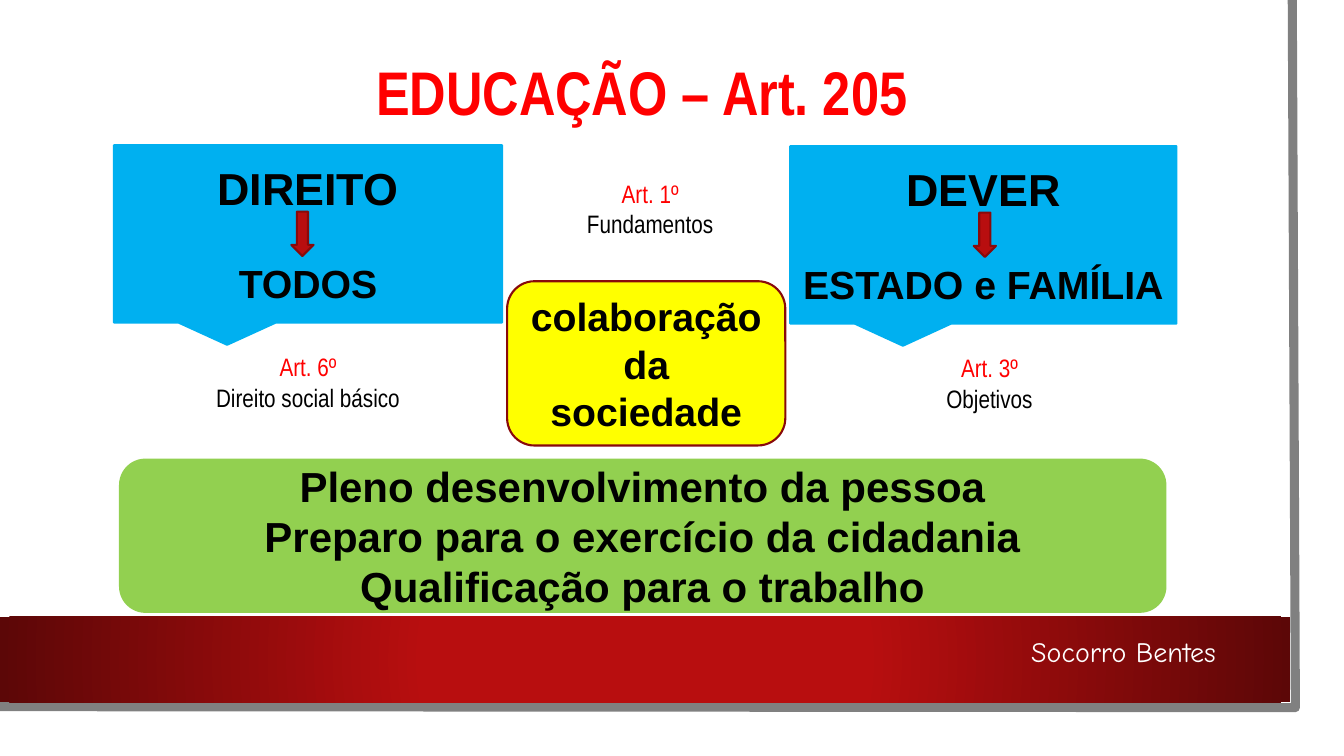
from dataclasses import dataclass

from lxml.etree import SubElement
from pptx import Presentation
from pptx.dml.color import RGBColor
from pptx.enum.shapes import MSO_SHAPE
from pptx.enum.text import MSO_ANCHOR, MSO_AUTO_SIZE, PP_ALIGN
from pptx.oxml.ns import qn
from pptx.util import Inches, Pt

RED = RGBColor(0xFF, 0x00, 0x00)
BLACK = RGBColor(0x00, 0x00, 0x00)
WHITE = RGBColor(0xFF, 0xFF, 0xFF)
GRAY = RGBColor(0x80, 0x80, 0x80)
BRICK = RGBColor(0xB8, 0x0E, 0x0F)
WINE = RGBColor(0x88, 0x0A, 0x0B)
DARK = RGBColor(0x5C, 0x07, 0x07)
BLUE = RGBColor(0x00, 0xB0, 0xF0)
GREEN = RGBColor(0x92, 0xD0, 0x50)
YELLOW = RGBColor(0xFF, 0xFF, 0x00)

NARROW = "Arial Narrow"
WIDE = Inches(13.33)
HIGH = Inches(7.5)


@dataclass(frozen=True)
class Box:
    """Left, top, width and height as percent of the slide."""
    left: float
    top: float
    width: float
    height: float

    def place(self) -> tuple[int, int, int, int]:
        return (across(self.left), down(self.top),
                across(self.width), down(self.height))


@dataclass(frozen=True)
class Line:
    text: str
    size: int
    color: RGBColor = BLACK
    font: str = "Arial"
    bold: bool = True
    before: int = 0


@dataclass(frozen=True)
class Panel:
    kind: MSO_SHAPE
    box: Box
    fill: RGBColor
    edge: RGBColor
    lines: tuple[Line, ...] = ()


@dataclass(frozen=True)
class Note:
    box: Box
    lines: tuple[Line, ...]
    align: PP_ALIGN = PP_ALIGN.CENTER


def across(share: float) -> int:
    return round(WIDE * share / 100)


def down(share: float) -> int:
    return round(HIGH * share / 100)


def write(frame, lines: tuple[Line, ...], align=PP_ALIGN.CENTER) -> None:
    frame.word_wrap = True
    for index, line in enumerate(lines):
        para = frame.add_paragraph() if index else frame.paragraphs[0]
        para.alignment = align
        if line.before:
            para.space_before = Pt(line.before)
        run = para.add_run()
        run.text = line.text
        run.font.name = line.font
        run.font.size = Pt(line.size)
        run.font.bold = line.bold
        run.font.color.rgb = line.color


def draw_frame(slide) -> None:
    pen = slide.shapes.build_freeform(across(96.15), 0)
    pen.add_line_segments([(across(96.38), down(93.6)), (0, down(93.47))], close=False)
    edge = pen.convert_to_shape()
    edge.shadow.inherit = False
    edge.fill.background()
    edge.line.color.rgb = GRAY
    edge.line.width = Pt(6.5)


def draw_band(slide) -> None:
    """Draw the footer band, bright in the middle and dark at both ends."""
    band = slide.shapes.add_shape(MSO_SHAPE.RECTANGLE, *Box(0, 81.6, 96, 11.33).place())
    band.shadow.inherit = False
    band.line.fill.background()
    band.fill.gradient()
    grad = band.fill._xPr.find(qn("a:gradFill"))
    for child in list(grad):
        grad.remove(child)
    stops = SubElement(grad, qn("a:gsLst"))
    for share, color in ((34, BRICK), (100, DARK)):
        stop = SubElement(stops, qn("a:gs"), pos=str(share * 1000))
        SubElement(stop, qn("a:srgbClr"), val=str(color))
    shade = SubElement(grad, qn("a:path"), {"path": "circle"})
    SubElement(shade, qn("a:fillToRect"), dict.fromkeys("ltrb", "50000"))


def draw_title(slide, box: Box, line: Line) -> None:
    title = slide.shapes.title
    title.left, title.top, title.width, title.height = box.place()
    write(title.text_frame, (line,))
    title.text_frame.auto_size = MSO_AUTO_SIZE.NONE
    title.text_frame.vertical_anchor = MSO_ANCHOR.TOP


def draw_panel(slide, panel: Panel) -> None:
    shape = slide.shapes.add_shape(panel.kind, *panel.box.place())
    shape.shadow.inherit = False
    shape.fill.solid()
    shape.fill.fore_color.rgb = panel.fill
    shape.line.color.rgb = panel.edge
    shape.line.width = Pt(1.5)
    shape.text_frame.vertical_anchor = MSO_ANCHOR.MIDDLE
    write(shape.text_frame, panel.lines)


def draw_note(slide, note: Note) -> None:
    frame = slide.shapes.add_textbox(*note.box.place()).text_frame
    write(frame, note.lines, note.align)
    frame.auto_size = MSO_AUTO_SIZE.SHAPE_TO_FIT_TEXT


def callout(box: Box, head: str, foot: str) -> Panel:
    lines = (Line(head, 32), Line(foot, 28, before=32))
    return Panel(MSO_SHAPE.RECTANGULAR_CALLOUT, box, BLUE, BLUE, lines)


def arrow(left: float, top: float) -> Panel:
    return Panel(MSO_SHAPE.DOWN_ARROW, Box(left, top, 1.65, 5.87), BRICK, WINE)


def cite(box: Box, head: str, foot: str) -> Note:
    return Note(box, (Line(head, 18, RED, NARROW, False),
                      Line(foot, 18, BLACK, NARROW, False)))


GOALS = ("Pleno desenvolvimento da pessoa",
         "Preparo para o exercício da cidadania",
         "Qualificação para o trabalho")

PANELS = (
    Panel(MSO_SHAPE.ROUNDED_RECTANGLE, Box(37.73, 37.2, 20.7, 21.73), YELLOW, WINE,
          (Line("colaboração da sociedade", 28),)),
    Panel(MSO_SHAPE.ROUNDED_RECTANGLE, Box(8.93, 60.8, 77.78, 20.13), GREEN, GREEN,
          tuple(Line(goal, 30) for goal in GOALS)),
    callout(Box(8.48, 19.2, 28.88, 23.47), "DIREITO", "TODOS"),
    callout(Box(58.8, 19.33, 28.73, 23.47), "DEVER", "ESTADO e FAMÍLIA"),
    arrow(21.68, 28),
    arrow(72.45, 28.13),
)

NOTES = (
    Note(Box(60.08, 83.33, 31.13, 6),
         (Line("Socorro Bentes", 20, WHITE, "Comic Neue", False),), PP_ALIGN.RIGHT),
    cite(Box(42.15, 22.93, 12.45, 9.47), "Art. 1º", "Fundamentos"),
    cite(Box(8.48, 45.87, 28.88, 9.47), "Art. 6º", "Direito social básico"),
    cite(Box(63.83, 46, 19.58, 9.47), "Art. 3º", "Objetivos"),
)


def main() -> None:
    deck = Presentation()
    deck.slide_width, deck.slide_height = WIDE, HIGH
    slide = deck.slides.add_slide(deck.slide_layouts[5])
    draw_frame(slide)
    draw_band(slide)
    draw_title(slide, Box(9.9, 6.4, 75.75, 11.2),
               Line("EDUCAÇÃO – Art. 205", 44, RED, NARROW))
    for panel in PANELS:
        draw_panel(slide, panel)
    for note in NOTES:
        draw_note(slide, note)
    deck.save("out.pptx")


if __name__ == "__main__":
    main()
